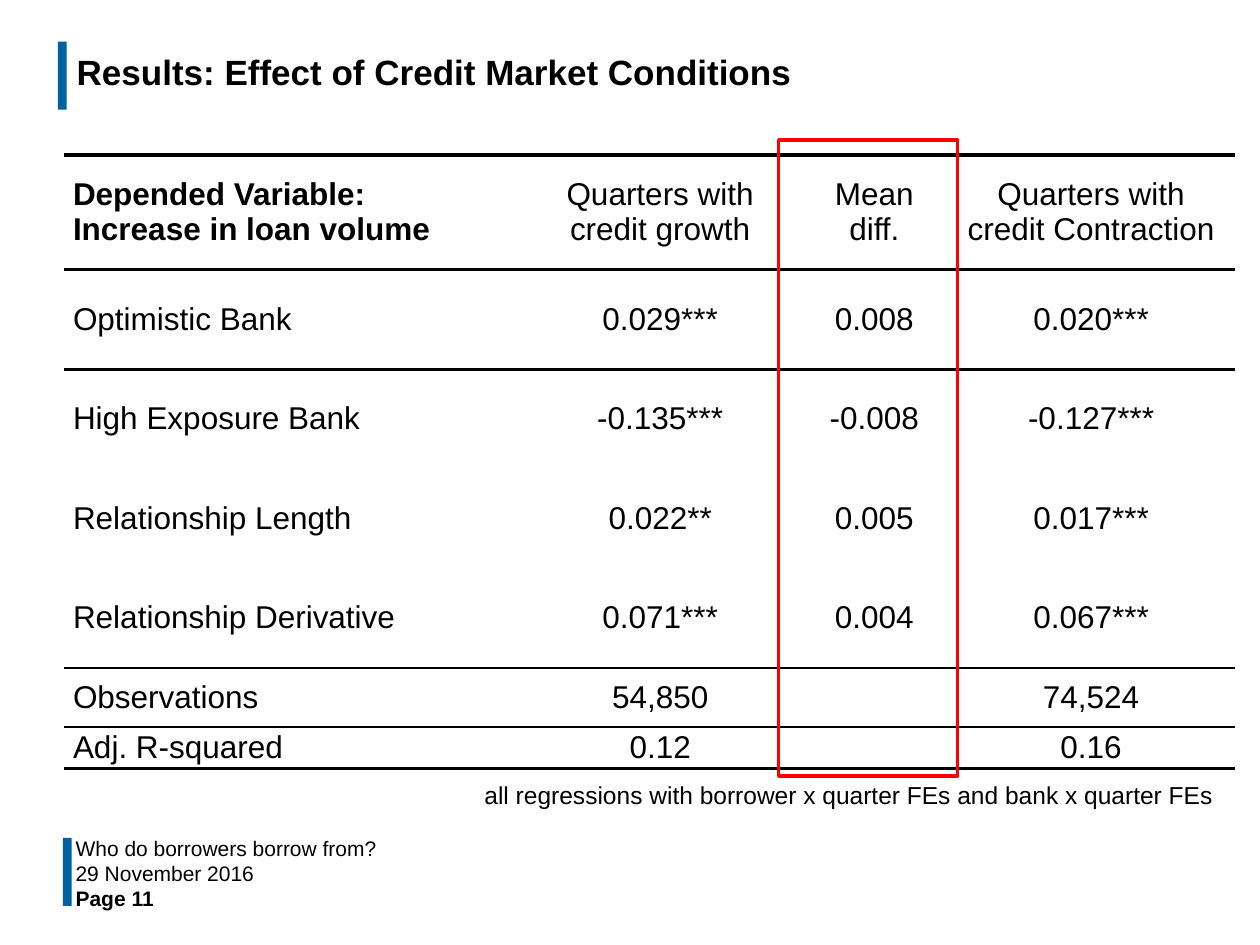
from pptx import Presentation
from pptx import util as u
from pptx.dml.color import RGBColor
from pptx.enum import shapes, text
from pptx.oxml.ns import qn
from lxml import etree

BLACK, BLUE, RED = "000000", "0062A1", "FF0000"
LEFT, CENTER, RIGHT = text.PP_ALIGN.LEFT, text.PP_ALIGN.CENTER, text.PP_ALIGN.RIGHT

COLUMN_WIDTHS = [3.61, 2.24, 1.16, 2.28]
ROW_HEIGHTS = [0.91, 0.79, 0.79, 0.79, 0.79, 0.47, 0.33]
RULES = [2.25, 1.5, 2, 0, 0, 1.5, 1.5, 2.25]  # points, top edge to bottom edge
RESULTS = [
    ["Depended Variable:\nIncrease in loan volume", "Quarters with credit growth",
     "Mean diff.", "Quarters with credit Contraction"],
    ["Optimistic Bank", "0.029***", "0.008", "0.020***"],
    ["High Exposure Bank", "-0.135***", "-0.008", "-0.127***"],
    ["Relationship Length", "0.022**", "0.005", "0.017***"],
    ["Relationship Derivative", "0.071***", "0.004", "0.067***"],
    ["Observations", "54,850", "", "74,524"],
    ["Adj. R-squared", "0.12", "", "0.16"],
]


def color(value):
    return RGBColor.from_string(value)


def inches(values):
    return [u.Inches(value) for value in values]


def write(frame, words, size=18, bold=False, align=LEFT, spacing=None):
    """Fill a text frame, one paragraph for each line of words."""
    for number, line in enumerate(words.split("\n")):
        para = frame.add_paragraph() if number else frame.paragraphs[0]
        para.alignment = align
        if spacing:
            para.line_spacing = u.Pt(spacing)
        span = para.add_run()
        span.text = line
        span.font.name = "Arial"
        span.font.size = u.Pt(size)
        span.font.bold = bold
        span.font.color.rgb = color(BLACK)


def add_text(page, place, words, inset=(0.1, 0.05), **style):
    box = page.shapes.add_textbox(*inches(place))
    frame = box.text_frame
    frame.word_wrap = True
    frame.vertical_anchor = text.MSO_ANCHOR.MIDDLE
    frame.margin_left = frame.margin_right = u.Inches(inset[0])
    frame.margin_top = frame.margin_bottom = u.Inches(inset[1])
    write(frame, words, **style)


def add_rectangle(page, place, fill=None, line=None):
    box = page.shapes.add_shape(shapes.MSO_SHAPE.RECTANGLE, *inches(place))
    box.shadow.inherit = False
    if fill:
        box.fill.solid()
        box.fill.fore_color.rgb = color(fill)
    else:
        box.fill.background()
    if line:
        box.line.color.rgb = color(line)
        box.line.width = u.Pt(2)
    else:
        box.line.fill.background()


def set_borders(cell, top, bottom):
    """Rule a cell above and below; a width of 0 draws nothing."""
    properties = cell._tc.get_or_add_tcPr()
    for side, width in (("L", 0), ("R", 0), ("T", top), ("B", bottom)):
        border = etree.SubElement(properties, qn(f"a:ln{side}"), w=str(u.Pt(width)))
        if width:
            fill = etree.SubElement(border, qn("a:solidFill"))
            etree.SubElement(fill, qn("a:srgbClr"), val=BLACK)
        else:
            etree.SubElement(border, qn("a:noFill"))


def add_results(page, left, top):
    place = (left, top, sum(COLUMN_WIDTHS), sum(ROW_HEIGHTS))
    table = page.shapes.add_table(
        len(ROW_HEIGHTS), len(COLUMN_WIDTHS), *inches(place)).table
    table.first_row = table.horz_banding = False
    for column, width in zip(table.columns, COLUMN_WIDTHS):
        column.width = u.Inches(width)
    for r, (row, height) in enumerate(zip(table.rows, ROW_HEIGHTS)):
        row.height = u.Inches(height)
        for c, cell in enumerate(row.cells):
            set_borders(cell, RULES[r], RULES[r + 1])
            cell.fill.background()
            cell.vertical_anchor = text.MSO_ANCHOR.MIDDLE
            cell.margin_left = cell.margin_right = u.Inches(0.07)
            cell.margin_top = cell.margin_bottom = 0
            if RESULTS[r][c]:
                write(cell.text_frame, RESULTS[r][c], bold=r == c == 0,
                      align=CENTER if c else LEFT)


def main():
    deck = Presentation()
    deck.slide_width, deck.slide_height = inches((10, 7.5))
    page = deck.slides.add_slide(deck.slide_layouts[6])

    for left, top in ((0.46, 0.33), (0.5, 6.65)):
        add_rectangle(page, (left, top, 0.07, 0.54), fill=BLUE)
    add_text(page, (0.51, 0.28, 9.29, 0.63),
             "Results: Effect of Credit Market Conditions",
             size=20, bold=True, spacing=20.4)

    footer = ["Who do borrowers borrow from?", "29 November 2016", "Page 11"]
    for number, line in enumerate(footer):
        add_text(page, (0.51, 6.64 + 0.2 * number, 8.88 if number == 0 else 2.31, 0.18),
                 line, inset=(0.09, 0.04), size=12, bold=number == 2)

    add_results(page, 0.51, 1.23)
    add_text(page, (1.38, 6.14, 8.35, 0.34),
             "all regressions with borrower x quarter FEs and bank x quarter FEs",
             size=14, align=RIGHT)
    add_rectangle(page, (6.18, 1.11, 1.42, 5.05), line=RED)

    deck.save("out.pptx")


if __name__ == "__main__":
    main()
